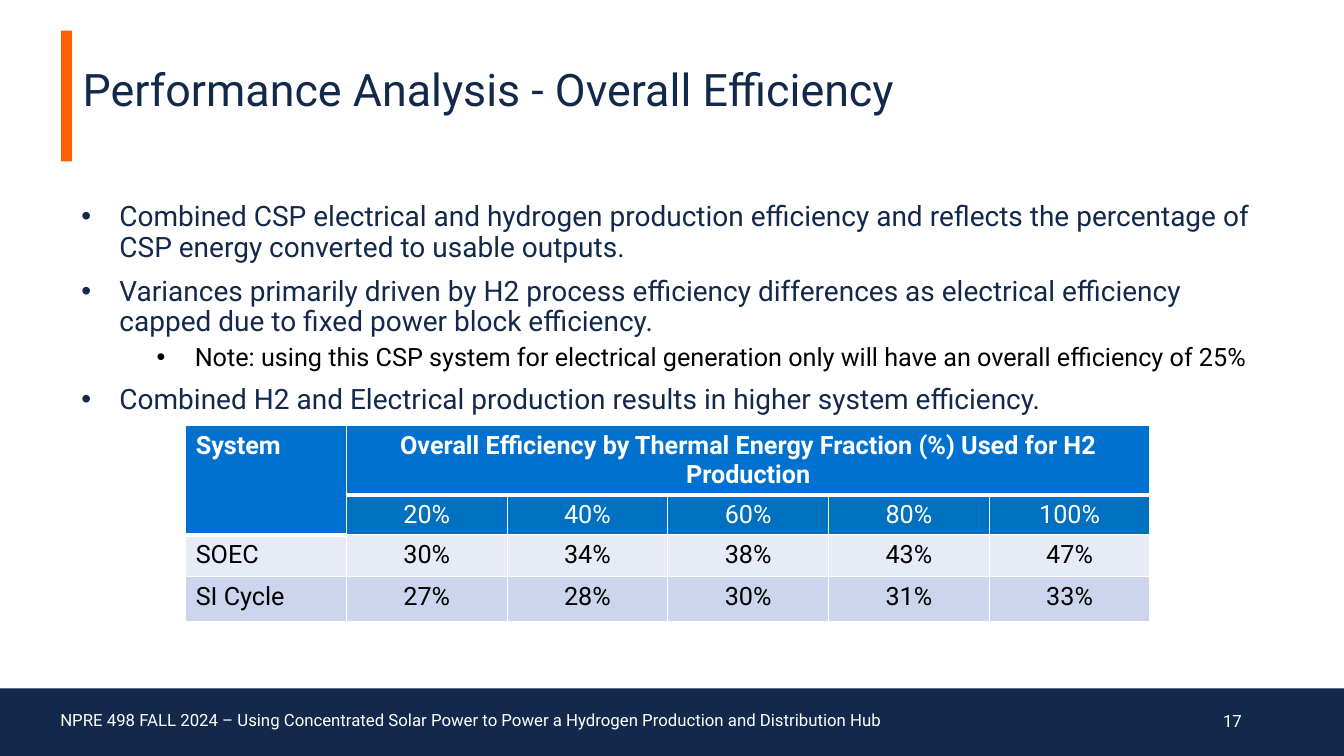
from dataclasses import dataclass
from lxml import etree
from pptx import Presentation
from pptx import util as u
from pptx.dml.color import RGBColor
from pptx.enum import shapes, text
from pptx.oxml.ns import qn

TITLE = "Performance Analysis - Overall Efficiency"
FOOTER = "NPRE 498 FALL 2024 – Using Concentrated Solar Power to Power a Hydrogen Production and Distribution Hub"
PAGE_NUMBER = "17"
BULLETS = [
    (0, "Combined CSP electrical and hydrogen production efficiency and reflects the percentage of CSP energy converted to usable outputs."),
    (0, "Variances primarily driven by H2 process efficiency differences as electrical efficiency capped due to fixed power block efficiency."),
    (1, "Note: using this CSP system for electrical generation only will have an overall efficiency of 25%"),
    (0, "Combined H2 and Electrical production results in higher system efficiency."),
]
EFFICIENCY_ROWS = [
    ["System", "Overall Efficiency by Thermal Energy Fraction (%) Used for H2 Production", "", "", "", ""],
    ["", "20%", "40%", "60%", "80%", "100%"],
    ["SOEC", "30%", "34%", "38%", "43%", "47%"],
    ["SI Cycle", "27%", "28%", "30%", "31%", "33%"],
]


@dataclass(frozen=True)
class Theme:
    """Colours, typeface and type sizes of the slide."""
    font: str = "Roboto"
    navy: str = "13294B"
    orange: str = "FF5F05"
    white: str = "FFFFFF"
    black: str = "000000"
    row_fills: tuple = ("0071CE", "0070C0", "E7EBF6", "CCD5ED")
    title_size: int = 32
    body_size: int = 20
    note_size: int = 18
    footer_size: int = 12


THEME = Theme()
LEFT, CENTER, RIGHT = text.PP_ALIGN.LEFT, text.PP_ALIGN.CENTER, text.PP_ALIGN.RIGHT
TOP, MIDDLE = text.MSO_ANCHOR.TOP, text.MSO_ANCHOR.MIDDLE
LEVELS = [
    {"indent": 0.96, "before": 10, "size": THEME.body_size, "color": THEME.navy},
    {"indent": 2.86, "before": 5, "size": THEME.note_size, "color": THEME.black},
]
HANGING = 0.96
TABLE_LEFT, TABLE_TOP, COLUMN_WIDTH = 4.68, 10.73, 4.05
ROW_HEIGHTS = [1.3, 0.98, 1.06, 1.14]
HEAVY_BOTTOMS = {(0, column) for column in range(6)} | {(1, 0)}


def set_all(target, values):
    """Set each named attribute of the target."""
    for name, value in values.items():
        setattr(target, name, value)


def write(paragraph, words, size, color, bold=False, **layout):
    """Fill a paragraph with one formatted run."""
    set_all(paragraph, layout)
    run = paragraph.add_run()
    run.text = words
    set_all(run.font, {"name": THEME.font, "size": u.Pt(size), "bold": bold})
    run.font.color.rgb = RGBColor.from_string(color)


def prepare(shape, box, anchor):
    """Place a text shape and return its frame."""
    set_all(shape, dict(zip(("left", "top", "width", "height"), map(u.Cm, box))))
    frame = shape.text_frame
    set_all(frame, {"word_wrap": True, "auto_size": text.MSO_AUTO_SIZE.NONE, "vertical_anchor": anchor})
    return frame


def add_text_frame(slide, box, anchor):
    """Add a text box and return its frame."""
    return prepare(slide.shapes.add_textbox(0, 0, 0, 0), box, anchor)


def add_block(slide, box, color):
    """Add a plain coloured rectangle."""
    shape = slide.shapes.add_shape(shapes.MSO_SHAPE.RECTANGLE, *map(u.Cm, box))
    shape.shadow.inherit = False
    shape.fill.solid()
    shape.fill.fore_color.rgb = RGBColor.from_string(color)
    shape.line.fill.background()


def add_bullets(slide):
    """Add the two-level bullet list."""
    frame = add_text_frame(slide, (1.8, 4.98, 30.05, 11.46), TOP)
    for index, (level, words) in enumerate(BULLETS):
        style = LEVELS[level]
        paragraph = frame.add_paragraph() if index else frame.paragraphs[0]
        properties = paragraph._p.get_or_add_pPr()
        properties.set("marL", str(u.Cm(style["indent"])))
        properties.set("indent", str(-u.Cm(HANGING)))
        etree.SubElement(properties, qn("a:buFont"), typeface="Arial")
        etree.SubElement(properties, qn("a:buChar"), char="•")
        write(paragraph, words, style["size"], style["color"], level=level, line_spacing=0.9,
              space_before=u.Pt(style["before"] if index else 0))


def add_border(cell, side, points):
    """Add a white border to one side of a cell."""
    properties = cell._tc.get_or_add_tcPr()
    line = etree.SubElement(properties, qn(f"a:ln{side}"), w=str(u.Pt(points)))
    fill = etree.SubElement(line, qn("a:solidFill"))
    etree.SubElement(fill, qn("a:srgbClr"), val=THEME.white)


def add_efficiency_table(slide):
    """Add the efficiency table with its merged heading cells."""
    columns = len(EFFICIENCY_ROWS[0])
    frame = slide.shapes.add_table(len(EFFICIENCY_ROWS), columns, u.Cm(TABLE_LEFT), u.Cm(TABLE_TOP),
                                   u.Cm(COLUMN_WIDTH * columns), u.Cm(sum(ROW_HEIGHTS)))
    table = frame.table
    set_all(table, {"first_row": False, "horz_banding": False})
    for column in table.columns:
        column.width = u.Cm(COLUMN_WIDTH)
    for row, height in zip(table.rows, ROW_HEIGHTS):
        row.height = u.Cm(height)
    for row, values in enumerate(EFFICIENCY_ROWS):
        for column, words in enumerate(values):
            cell = table.cell(row, column)
            edges = {"L": 1, "R": 1, "T": 3 if (row - 1, column) in HEAVY_BOTTOMS else 1,
                     "B": 3 if (row, column) in HEAVY_BOTTOMS else 1}
            for side, points in edges.items():
                add_border(cell, side, points)
            cell.fill.solid()
            cell.fill.fore_color.rgb = RGBColor.from_string(THEME.row_fills[row])
            if words:
                write(cell.text_frame.paragraphs[0], words, THEME.note_size,
                      THEME.white if row < 2 else THEME.black, bold=row == 0,
                      alignment=CENTER if column else LEFT)
    table.cell(0, 0).merge(table.cell(1, 0))
    table.cell(0, 1).merge(table.cell(0, columns - 1))


def main():
    """Build and save the slide."""
    presentation = Presentation()
    set_all(presentation, {"slide_width": u.Cm(33.87), "slide_height": u.Cm(19.05)})
    slide = presentation.slides.add_slide(presentation.slide_layouts[5])
    add_block(slide, (1.54, 0.77, 0.28, 3.3), THEME.orange)
    add_block(slide, (0, 17.35, 33.87, 1.7), THEME.navy)
    title = prepare(slide.shapes.title, (1.83, 0.76, 28.8, 3.3), MIDDLE)
    write(title.paragraphs[0], TITLE, THEME.title_size, THEME.navy, alignment=LEFT, line_spacing=0.7)
    footer = add_text_frame(slide, (1.27, 17.65, 22.66, 1.02), MIDDLE)
    write(footer.paragraphs[0], FOOTER, THEME.footer_size, THEME.white, line_spacing=0.9)
    number = add_text_frame(slide, (23.93, 17.65, 7.62, 1.02), MIDDLE)
    write(number.paragraphs[0], PAGE_NUMBER, THEME.footer_size, THEME.white, alignment=RIGHT)
    add_bullets(slide)
    add_efficiency_table(slide)
    presentation.save("out.pptx")


if __name__ == "__main__":
    main()
